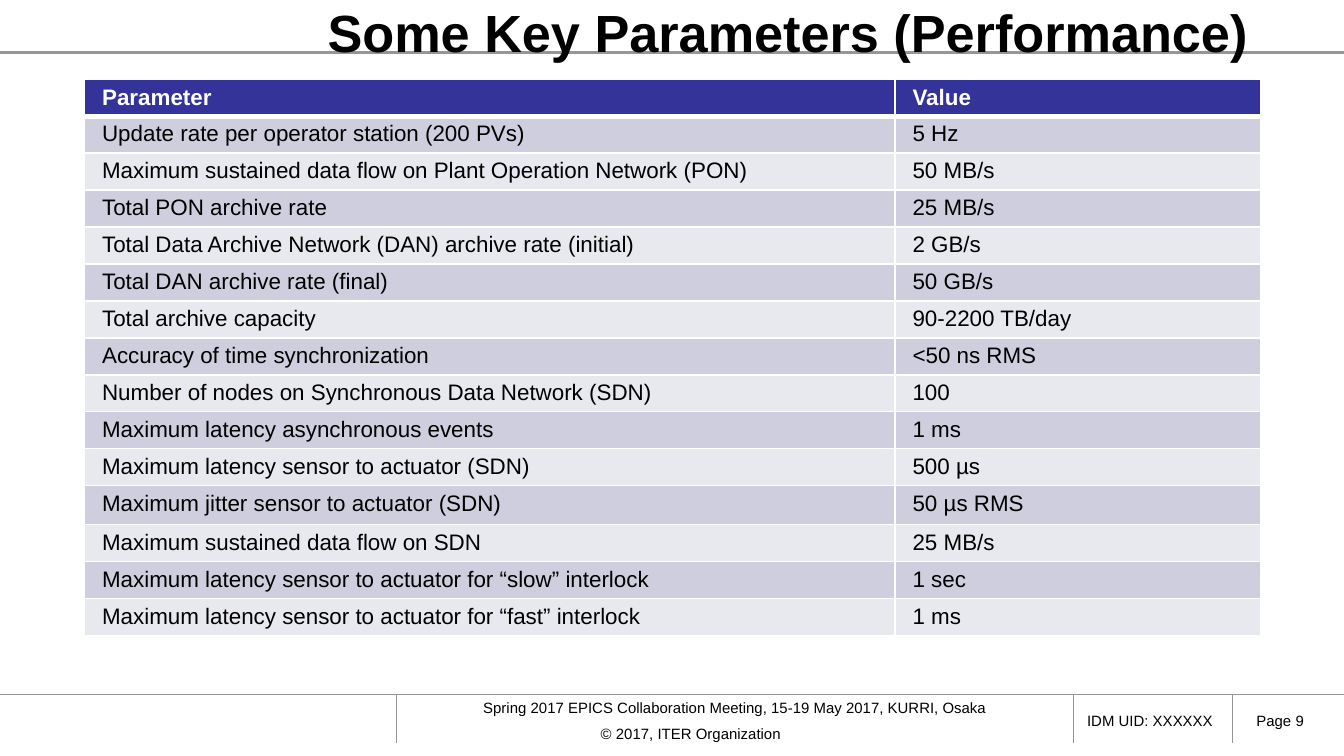
from lxml.etree import SubElement
from pptx import Presentation
from pptx.dml.color import RGBColor
from pptx.enum.shapes import MSO_CONNECTOR
from pptx.enum.text import MSO_ANCHOR, PP_ALIGN
from pptx.oxml.ns import qn
from pptx.util import Inches, Pt

FONT = "Arial"
BLACK, WHITE, GRAY = "000000", "FFFFFF", "969696"
HEADER_FILL = "333399"
BAND_FILLS = ("CECEDE", "E8E8EF")
TALL_ROW = 11

PARAMETERS = [
    ("Parameter", "Value"),
    ("Update rate per operator station (200 PVs)", "5 Hz"),
    ("Maximum sustained data flow on Plant Operation Network (PON)", "50 MB/s"),
    ("Total PON archive rate", "25 MB/s"),
    ("Total Data Archive Network (DAN) archive rate (initial)", "2 GB/s"),
    ("Total DAN archive rate (final)", "50 GB/s"),
    ("Total archive capacity", "90-2200 TB/day"),
    ("Accuracy of time synchronization", "<50 ns RMS"),
    ("Number of nodes on Synchronous Data Network (SDN)", "100"),
    ("Maximum latency asynchronous events", "1 ms"),
    ("Maximum latency sensor to actuator (SDN)", "500 µs"),
    ("Maximum jitter sensor to actuator (SDN)", "50 µs RMS"),
    ("Maximum sustained data flow on SDN", "25 MB/s"),
    ("Maximum latency sensor to actuator for “slow” interlock", "1 sec"),
    ("Maximum latency sensor to actuator for “fast” interlock", "1 ms"),
]


def rgb(color):
    """Return the colour for a hex string."""
    return RGBColor.from_string(color)


def style_font(paragraph, size, color=BLACK, bold=False):
    """Format every run of a paragraph."""
    for run in paragraph.runs:
        run.font.name = FONT
        run.font.size = Pt(size)
        run.font.bold = bold
        run.font.color.rgb = rgb(color)


def add_rule(slide, start, end, width):
    """Draw a gray rule between two points given in inches."""
    rule = slide.shapes.add_connector(
        MSO_CONNECTOR.STRAIGHT, *(Inches(value) for value in start + end))
    rule.line.color.rgb = rgb(GRAY)
    rule.line.width = Pt(width)
    SubElement(rule.element.spPr, qn("a:effectLst"))


def add_tab_stop(paragraph, position):
    """Add a left tab stop at a position in inches."""
    tabs = SubElement(paragraph._p.get_or_add_pPr(), qn("a:tabLst"))
    SubElement(tabs, qn("a:tab"), pos=str(Inches(position)), algn="l")


def add_footer_text(slide, box, lines, alignment=PP_ALIGN.LEFT, margins=(0.1, 0.05)):
    """Add a vertically centred footer text box."""
    shape = slide.shapes.add_textbox(*(Inches(value) for value in box))
    frame = shape.text_frame
    frame.word_wrap = True
    frame.vertical_anchor = MSO_ANCHOR.MIDDLE
    frame.margin_left = frame.margin_right = Inches(margins[0])
    frame.margin_top = frame.margin_bottom = Inches(margins[1])
    frame.text = "\n".join(lines)
    for index, paragraph in enumerate(frame.paragraphs):
        paragraph.alignment = alignment
        if index:
            paragraph.space_before = Pt(4)
            add_tab_stop(paragraph, 2)
        style_font(paragraph, 8)


def add_footer(slide, left, top, width, height):
    """Draw the footer rules and its three text fields."""
    add_rule(slide, (left, top), (left + width, top), 0.5)
    for offset in (2.95, 7.99, 9.17):
        add_rule(slide, (left + offset, top), (left + offset, top + height), 0.5)
    add_footer_text(
        slide, (left + 2.95, top + 0.02, 5.04, 0.34),
        ["Spring 2017 EPICS Collaboration Meeting, 15-19 May 2017, KURRI, Osaka",
         "© 2017, ITER Organization\t"],
        PP_ALIGN.CENTER, (0.04, 0))
    add_footer_text(slide, (left + 7.99, top + 0.07, 1.22, 0.24), ["IDM UID: XXXXXX"])
    add_footer_text(slide, (left + 9.25, top + 0.07, 0.64, 0.24), ["Page 9"])


def place_title(slide, left, top, width, height):
    """Move and format the title, in front of the rule that crosses it."""
    add_rule(slide, (0, 0.39), (10, 0.39), 1.25)
    title = slide.shapes.title
    title.left, title.top = Inches(left), Inches(top)
    title.width, title.height = Inches(width), Inches(height)
    title.text_frame.text = "Some Key Parameters (Performance)"
    title.text_frame.vertical_anchor = MSO_ANCHOR.MIDDLE
    paragraph = title.text_frame.paragraphs[0]
    paragraph.alignment = PP_ALIGN.RIGHT
    style_font(paragraph, 28, bold=True)
    title.element.getparent().append(title.element)


def set_borders(cell, widths):
    """Give a cell white borders with the given width for each side."""
    properties = cell._tc.get_or_add_tcPr()
    for side, width in widths.items():
        line = SubElement(properties, qn(f"a:ln{side}"), w=str(Pt(width)))
        fill = SubElement(line, qn("a:solidFill"))
        SubElement(fill, qn("a:srgbClr"), val=WHITE)


def fill_cell(cell, text, row_index):
    """Write and format one cell according to its row."""
    is_header = row_index == 0
    cell.margin_left = cell.margin_right = Inches(0.13)
    cell.margin_top = cell.margin_bottom = Inches(0.04)
    set_borders(cell, {"L": 1, "R": 1, "T": 3 if row_index == 1 else 1,
                       "B": 3 if is_header else 1})
    cell.fill.solid()
    cell.fill.fore_color.rgb = rgb(
        HEADER_FILL if is_header else BAND_FILLS[(row_index - 1) % 2])
    cell.text = text
    style_font(cell.text_frame.paragraphs[0], 12,
               WHITE if is_header else BLACK, is_header)


def add_parameter_table(slide, left, top, width, height):
    """Add the table of parameters and values."""
    table = slide.shapes.add_table(
        len(PARAMETERS), 2, Inches(left), Inches(top),
        Inches(width), Inches(height)).table
    table.columns[0].width = Inches(6.03)
    table.columns[1].width = Inches(width - 6.03)
    tall_height = 0.29
    row_height = (height - tall_height) / (len(PARAMETERS) - 1)
    for row_index, texts in enumerate(PARAMETERS):
        table.rows[row_index].height = Inches(
            tall_height if row_index == TALL_ROW else row_height)
        for column_index, text in enumerate(texts):
            fill_cell(table.cell(row_index, column_index), text, row_index)


def main():
    """Build and save the presentation."""
    presentation = Presentation()
    presentation.slide_width = Inches(10)
    presentation.slide_height = presentation.slide_width * 9 // 16
    slide = presentation.slides.add_slide(presentation.slide_layouts[5])
    add_footer(slide, 0, 5.17, 10, 0.36)
    place_title(slide, 0.63, 0, 8.75, 0.47)
    add_parameter_table(slide, 0.63, 0.59, 8.75, 4.14)
    presentation.save("out.pptx")


if __name__ == "__main__":
    main()
